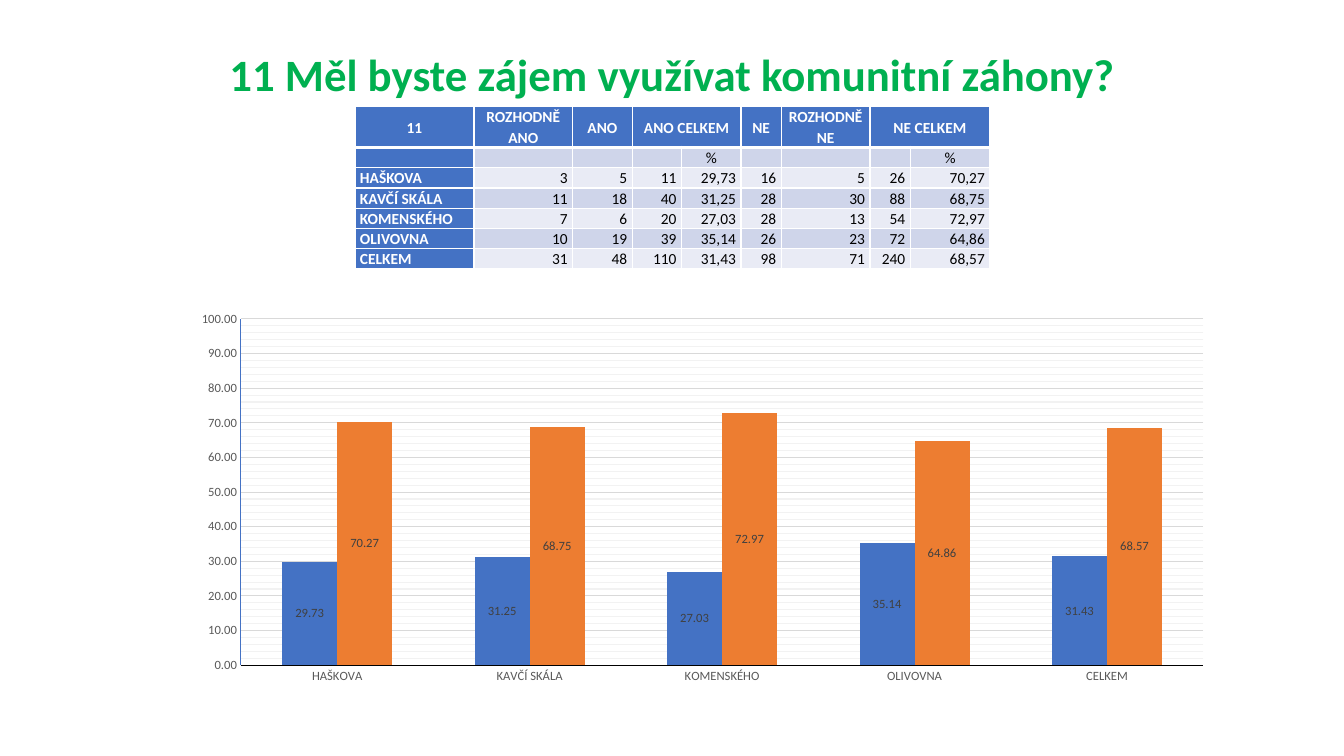
import pptx
import pptx.chart.data
import pptx.dml.color
import pptx.enum.chart
import pptx.enum.text
import pptx.oxml
import pptx.oxml.ns
import pptx.util
from lxml import etree

FONT = "Calibri"
COLORS = {
    "title": "00B050", "blue": "4472C4", "orange": "ED7D31",
    "band_dark": "CFD5EA", "band_light": "E9EBF5",
    "white": "FFFFFF", "black": "000000",
    "axis_text": "595959", "label_text": "404040",
    "major_grid": "D9D9D9", "minor_grid": "F2F2F2",
}
SLIDE_W, SLIDE_H = pptx.util.Inches(13.33), pptx.util.Inches(7.5)

HEADERS = {0: "11", 1: "ROZHODNĚ ANO", 2: "ANO", 3: "ANO CELKEM",
           5: "NE", 6: "ROZHODNĚ NE", 7: "NE CELKEM"}
MERGED_STARTS = (3, 7)
YES_PERCENT, NO_PERCENT = 4, 8
ANSWERS = [
    ("HAŠKOVA", "3", "5", "11", "29,73", "16", "5", "26", "70,27"),
    ("KAVČÍ SKÁLA", "11", "18", "40", "31,25", "28", "30", "88", "68,75"),
    ("KOMENSKÉHO", "7", "6", "20", "27,03", "28", "13", "54", "72,97"),
    ("OLIVOVNA", "10", "19", "39", "35,14", "26", "23", "72", "64,86"),
    ("CELKEM", "31", "48", "110", "31,43", "98", "71", "240", "68,57"),
]
COLUMN_WEIGHTS = (1.18, 0.98, 0.59, 0.49, 0.59, 0.4, 0.88, 0.4, 0.79)
ROW_WEIGHTS = (2, 1, 1, 1, 1, 1, 1)


def rgb(name):
    return pptx.dml.color.RGBColor.from_string(COLORS[name])


def share_box(left, top, width, height):
    """Turn percentages of the slide into a box in EMU."""
    return (int(SLIDE_W * left / 100), int(SLIDE_H * top / 100),
            int(SLIDE_W * width / 100), int(SLIDE_H * height / 100))


def set_font(font, size, color, bold=False):
    font.name, font.size, font.bold = FONT, pptx.util.Pt(size), bold
    font.color.rgb = rgb(color)


def set_line(line, color, width=0.75):
    line.color.rgb = rgb(color)
    line.width = pptx.util.Pt(width)


def line_xml(tag, color, width):
    return pptx.oxml.parse_xml(
        f'<a:{tag} {pptx.oxml.ns.nsdecls("a")} w="{pptx.util.Pt(width)}">'
        f'<a:solidFill><a:srgbClr val="{COLORS[color]}"/></a:solidFill></a:{tag}>')


def add_title(slide, box, text):
    tf = slide.shapes.add_textbox(*box).text_frame
    tf.word_wrap = True
    tf.vertical_anchor = pptx.enum.text.MSO_ANCHOR.MIDDLE
    p = tf.paragraphs[0]
    p.alignment = pptx.enum.text.PP_ALIGN.CENTER
    r = p.add_run()
    r.text = text
    set_font(r.font, 32, "title", bold=True)


def set_borders(cell, top, bottom):
    tc_pr = cell._tc.get_or_add_tcPr()
    for i, (side, width) in enumerate(zip("LRTB", (1, 1, top, bottom))):
        tc_pr.insert(i, line_xml(f"ln{side}", "white", width))


def fill_cell(cell, text, row, col):
    """Style a cell by its row and column, then write its text."""
    align, anchor = pptx.enum.text.PP_ALIGN, pptx.enum.text.MSO_ANCHOR
    is_head = row == 0 or col == 0
    cell.margin_left = cell.margin_right = pptx.util.Inches(0.05)
    cell.margin_top = cell.margin_bottom = 0
    cell.vertical_anchor = anchor.MIDDLE if row < 2 else anchor.BOTTOM
    cell.fill.solid()
    band = "band_dark" if row % 2 else "band_light"
    cell.fill.fore_color.rgb = rgb("blue" if is_head else band)
    set_borders(cell, 3 if row == 1 else 1, 3 if row == 0 else 1)
    p = cell.text_frame.paragraphs[0]
    if not text:
        etree.SubElement(p._p, pptx.oxml.ns.qn("a:endParaRPr"), sz="1100")
        return
    p.line_spacing = 1.07
    p.space_after = pptx.util.Pt(8)
    if row < 2:
        p.alignment = align.CENTER
    else:
        p.alignment = align.RIGHT if col else align.LEFT
    r = p.add_run()
    r.text = text
    set_font(r.font, 11, "white" if is_head else "black", is_head)


def add_answer_table(slide, box):
    columns = range(len(COLUMN_WEIGHTS))
    rows = [[HEADERS.get(c, "") for c in columns],
            ["%" if c in (YES_PERCENT, NO_PERCENT) else "" for c in columns],
            *ANSWERS]
    table = slide.shapes.add_table(len(rows), len(columns), *box).table
    table.horz_banding = False
    for column, weight in zip(table.columns, COLUMN_WEIGHTS):
        column.width = int(box[2] * weight / sum(COLUMN_WEIGHTS))
    for row, weight in zip(table.rows, ROW_WEIGHTS):
        row.height = int(box[3] * weight / sum(ROW_WEIGHTS))
    for r, texts in enumerate(rows):
        for c, text in enumerate(texts):
            fill_cell(table.cell(r, c), text, r, c)
    for c in MERGED_STARTS:
        table.cell(0, c).merge(table.cell(0, c + 1))


def set_plot_area(chart, x, y, w, h):
    """Fix the inner plot area, as shares of the chart."""
    plot_area = chart._chartSpace.chart.plotArea
    for old in plot_area.findall(pptx.oxml.ns.qn("c:layout")):
        plot_area.remove(old)
    sizes = "".join(f'<c:{tag} val="{value}"/>'
                    for tag, value in zip("xywh", (x, y, w, h)))
    plot_area.insert(0, pptx.oxml.parse_xml(
        f'<c:layout {pptx.oxml.ns.nsdecls("c")}><c:manualLayout>'
        '<c:layoutTarget val="inner"/><c:xMode val="edge"/><c:yMode val="edge"/>'
        f'{sizes}</c:manualLayout></c:layout>'))


def style_axes(chart):
    qn = pptx.oxml.ns.qn
    no_tick = pptx.enum.chart.XL_TICK_MARK.NONE
    for axis, color in ((chart.category_axis, "black"), (chart.value_axis, "blue")):
        axis.major_tick_mark = axis.minor_tick_mark = no_tick
        set_font(axis.tick_labels.font, 9, "axis_text")
        set_line(axis.format.line, color)
    values = chart.value_axis
    values.minimum_scale, values.maximum_scale = 0, 100
    values.major_unit, values.minor_unit = 10, 2
    values.has_major_gridlines = values.has_minor_gridlines = True
    set_line(values.major_gridlines.format.line, "major_grid")
    minor_grid = values._element.find(qn("c:minorGridlines"))
    etree.SubElement(minor_grid, qn("c:spPr")).append(
        line_xml("ln", "minor_grid", 0.75))
    values.tick_labels.number_format = "0.00"
    values.tick_labels.number_format_is_linked = False


def add_percent_chart(slide, box):
    data = pptx.chart.data.CategoryChartData(number_format="0.00")
    data.categories = [answer[0] for answer in ANSWERS]
    for name, col in (("Series 1", YES_PERCENT), ("Series 2", NO_PERCENT)):
        data.add_series(name, [float(a[col].replace(",", ".")) for a in ANSWERS])
    chart = slide.shapes.add_chart(
        pptx.enum.chart.XL_CHART_TYPE.COLUMN_CLUSTERED, *box, data).chart
    chart.has_legend = chart.has_title = False
    set_font(chart.font, 10, "black")
    style_axes(chart)
    plot = chart.plots[0]
    plot.gap_width, plot.overlap, plot.vary_by_categories = 150, 0, False
    for series, color in zip(plot.series, ("blue", "orange")):
        series.format.fill.solid()
        series.format.fill.fore_color.rgb = rgb(color)
        labels = series.data_labels
        labels.show_value = True
        labels.position = pptx.enum.chart.XL_LABEL_POSITION.CENTER
        labels.number_format = "0.00"
        labels.number_format_is_linked = False
        set_font(labels.font, 9, "label_text")
    set_plot_area(chart, 0.1, 0.07, 0.83, 0.79)


def main():
    prs = pptx.Presentation()
    prs.slide_width, prs.slide_height = SLIDE_W, SLIDE_H
    slide = prs.slides.add_slide(prs.slide_layouts[6])
    add_title(slide, share_box(6.9, 5.33, 86.27, 8.8),
              "11 Měl byste zájem využívat komunitní záhony?")
    add_answer_table(slide, share_box(26.41, 14.13, 47.26, 21.47))
    add_percent_chart(slide, share_box(9.3, 38.13, 86.27, 58))
    prs.save("out.pptx")


if __name__ == "__main__":
    main()
